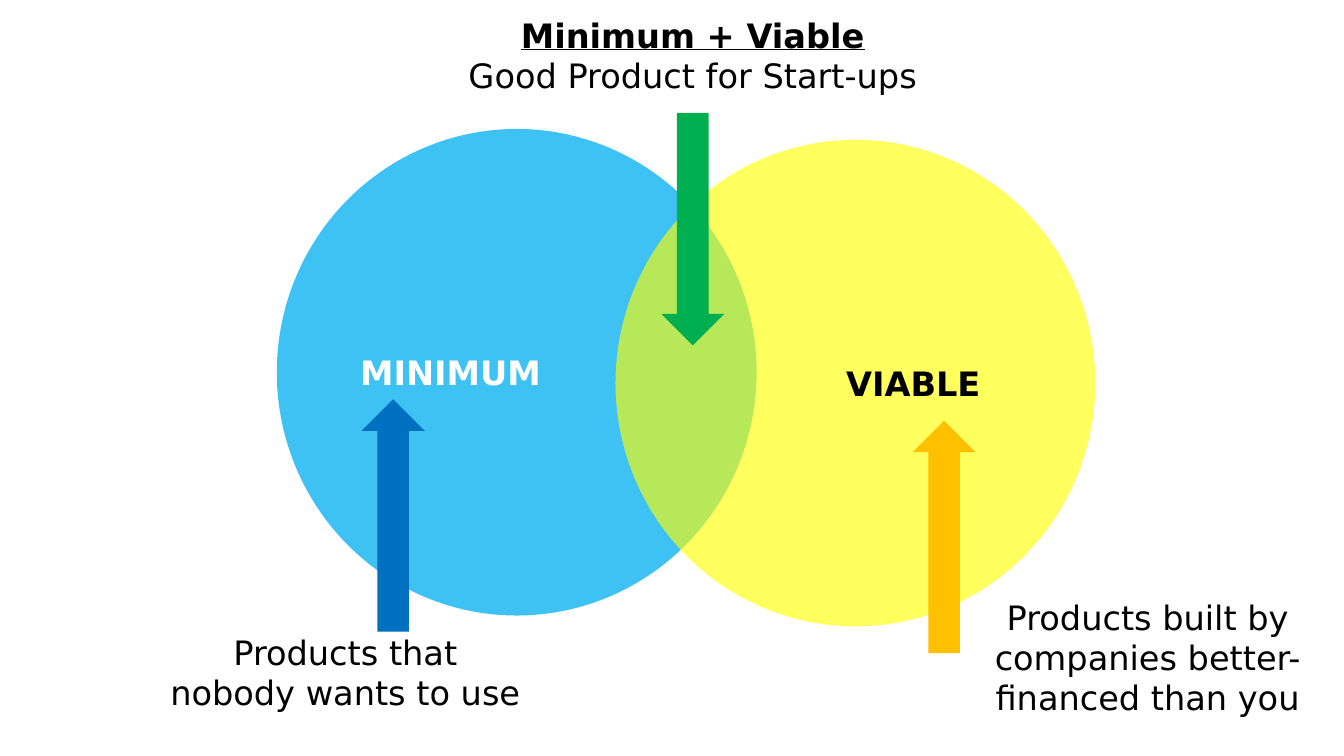
"""Build a Venn diagram slide of minimum and viable products."""
import lxml.etree
import pptx
import pptx.dml.color
import pptx.enum.shapes
import pptx.enum.text
import pptx.oxml.ns
import pptx.util

Inches = pptx.util.Inches
RGBColor = pptx.dml.color.RGBColor
Shape = pptx.enum.shapes.MSO_SHAPE
Align = pptx.enum.text.PP_ALIGN

BLACK = RGBColor(0x00, 0x00, 0x00)
WHITE = RGBColor(0xFF, 0xFF, 0xFF)
SKY = RGBColor(0x00, 0xB0, 0xF0)
YELLOW = RGBColor(0xFF, 0xFF, 0x00)
GREEN = RGBColor(0x00, 0xB0, 0x50)
AMBER = RGBColor(0xFF, 0xC0, 0x00)
BLUE = RGBColor(0x00, 0x70, 0xC0)


class VennSlide:
    font_name = "DejaVu Sans"
    font_size = pptx.util.Pt(18)
    circle_size = Inches(3.57), Inches(3.62)
    arrow_size = Inches(0.47), Inches(1.73)

    def __init__(self, presentation):
        self.slide = presentation.slides.add_slide(presentation.slide_layouts[6])

    def format_text(self, paragraph, color, align, bold=False, underline=False):
        paragraph.alignment = align
        for run in paragraph.runs:
            run.font.name = self.font_name
            run.font.size = self.font_size
            run.font.color.rgb = color
            run.font.bold = bold
            run.font.underline = underline

    def add_filled(self, kind, left, top, size, color):
        shape = self.slide.shapes.add_shape(kind, Inches(left), Inches(top), *size)
        shape.shadow.inherit = False
        shape.fill.solid()
        shape.fill.fore_color.rgb = color
        shape.line.fill.background()
        return shape

    def add_circle(self, left, top, color, opacity, label, label_color, align, indent=0.1):
        circle = self.add_filled(Shape.OVAL, left, top, self.circle_size, color)
        qn = pptx.oxml.ns.qn
        fill_color = circle._element.spPr.find(f"{qn('a:solidFill')}/{qn('a:srgbClr')}")
        lxml.etree.SubElement(fill_color, qn("a:alpha"), val=str(opacity * 1000))
        text_frame = circle.text_frame
        text_frame.text = label
        text_frame.margin_left = Inches(indent)
        text_frame.vertical_anchor = pptx.enum.text.MSO_ANCHOR.MIDDLE
        self.format_text(text_frame.paragraphs[0], label_color, align, bold=True)

    def add_arrow(self, left, top, color, rotation=0):
        arrow = self.add_filled(Shape.DOWN_ARROW, left, top, self.arrow_size, color)
        arrow.rotation = rotation

    def add_caption(self, left, top, width, height, text, wrap=True, headed=False):
        box = self.slide.shapes.add_textbox(
            Inches(left), Inches(top), Inches(width), Inches(height))
        text_frame = box.text_frame
        text_frame.text = text
        text_frame.word_wrap = wrap
        text_frame.auto_size = pptx.enum.text.MSO_AUTO_SIZE.SHAPE_TO_FIT_TEXT
        for index, paragraph in enumerate(text_frame.paragraphs):
            heading = headed and index == 0
            self.format_text(paragraph, BLACK, Align.CENTER, heading, heading)


def main():
    presentation = pptx.Presentation()
    presentation.slide_width = Inches(10)
    presentation.slide_height = Inches(10) * 9 // 16

    venn = VennSlide(presentation)
    venn.add_circle(2.06, 0.96, SKY, 76, "MINIMUM", WHITE, Align.LEFT)
    venn.add_circle(4.58, 1.04, YELLOW, 63, "VIABLE", BLACK, Align.CENTER, indent=0.96)

    venn.add_arrow(4.92, 0.84, GREEN)
    venn.add_arrow(6.79, 3.13, AMBER, rotation=180)
    venn.add_arrow(2.69, 2.97, BLUE, rotation=180)

    venn.add_caption(3.34, 0.06, 3.63, 0.71,
                     "Minimum + Viable\nGood Product for Start-ups", wrap=False, headed=True)
    venn.add_caption(1.15, 4.65, 2.84, 0.71, "Products that nobody wants to use")
    venn.add_caption(7.12, 4.39, 2.84, 1.01,
                     "Products built by companies better-financed than you")

    presentation.save("out.pptx")


if __name__ == "__main__":
    main()
